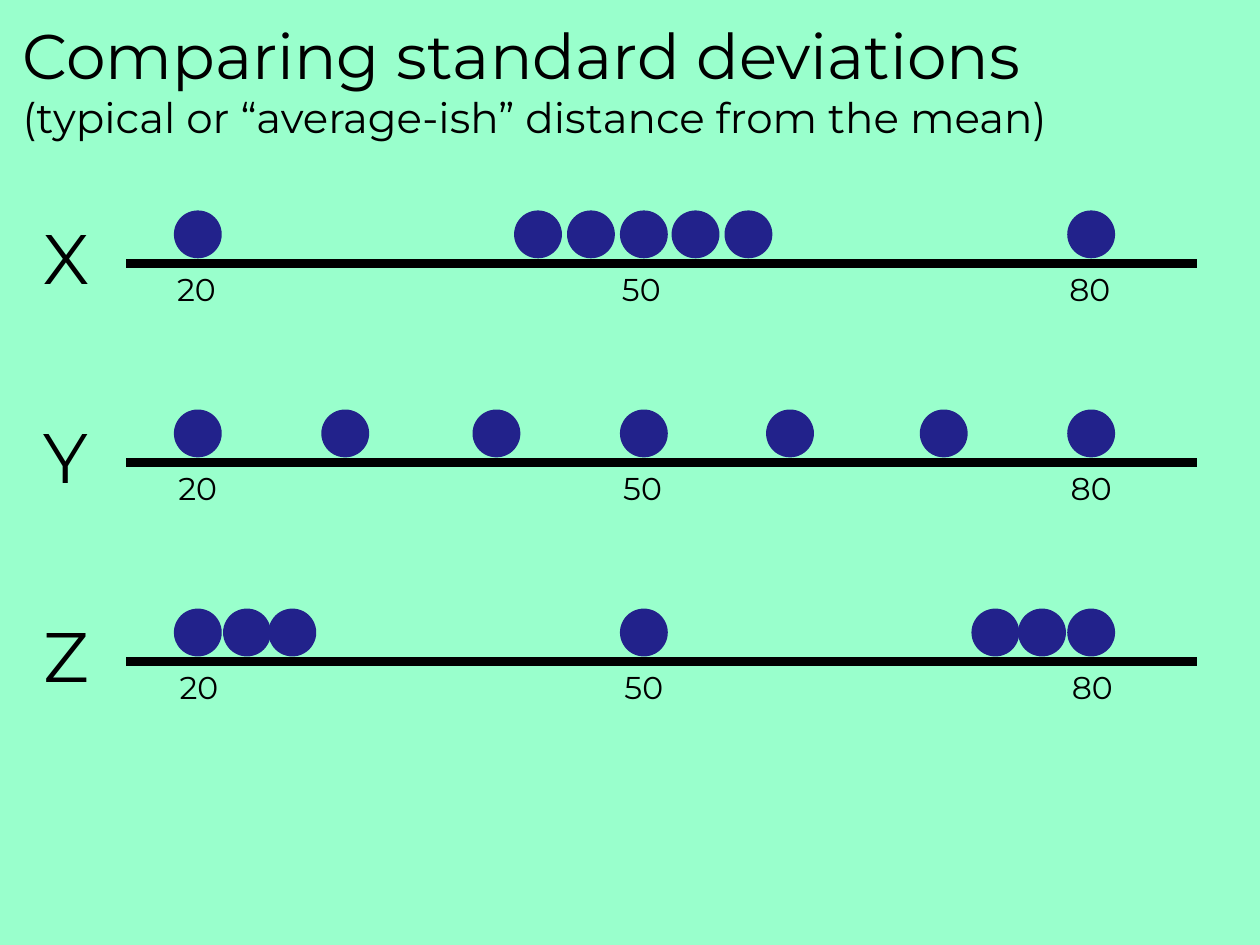
import pptx
import pptx.dml.color
import pptx.enum.shapes
import pptx.enum.text
import pptx.oxml.ns
import pptx.util
from lxml import etree
from pptx.util import Inches

FONT = "Montserrat"
BLACK = "000000"
NAVY = "22228B"
MINT = "99FFCC"

DOT_SIZE = 0.38
AXIS_START = 0.75  # from the left of a row
AXIS_DROP = 0.44   # from the top of a row
DOT_RISE = 0.42    # from the axis up to the top of a dot
ROW_PITCH = 1.58
LABEL_DRIFT = 0.01  # labels move right a little with each row

LABELS = [("20", 1.04), ("50", 4.57), ("80", 8.13)]  # text, left within a row
ROWS = [  # letter, left of each dot within a row
    ("X", [1.13, 3.83, 4.25, 4.67, 5.08, 5.5, 8.22]),
    ("Y", [1.13, 2.3, 3.5, 4.67, 5.83, 7.05, 8.22]),
    ("Z", [1.13, 1.52, 1.88, 4.67, 7.46, 7.83, 8.22]),
]


def color(hex_string):
    return pptx.dml.color.RGBColor.from_string(hex_string)


def style_font(font, size):
    font.name = FONT
    font.size = pptx.util.Pt(size)
    font.color.rgb = color(BLACK)


def add_label(shapes, text, left, top, width, height, size, align):
    box = shapes.add_textbox(Inches(left), Inches(top), Inches(width), Inches(height))
    frame = box.text_frame
    frame.word_wrap = False
    frame.auto_size = pptx.enum.text.MSO_AUTO_SIZE.SHAPE_TO_FIT_TEXT
    paragraph = frame.paragraphs[0]
    paragraph.text = text
    paragraph.alignment = align
    style_font(paragraph.font, size)


def add_axis(shapes, left, right, y):
    axis = shapes.add_connector(
        pptx.enum.shapes.MSO_CONNECTOR.STRAIGHT,
        Inches(left), Inches(y), Inches(right), Inches(y))
    axis.line.color.rgb = color(BLACK)
    axis.line.width = pptx.util.Pt(5)
    properties = axis._element.spPr
    etree.SubElement(properties, pptx.oxml.ns.qn("a:effectLst"))


def add_dot(shapes, left, top):
    dot = shapes.add_shape(
        pptx.enum.shapes.MSO_SHAPE.OVAL,
        Inches(left), Inches(top), Inches(DOT_SIZE), Inches(DOT_SIZE))
    dot.shadow.inherit = False
    dot.fill.solid()
    dot.fill.fore_color.rgb = color(NAVY)
    dot.line.fill.background()


def add_title(slide, left, top, width, height):
    title = slide.shapes.title
    title.left, title.top = Inches(left), Inches(top)
    title.width, title.height = Inches(width), Inches(height)
    frame = title.text_frame
    frame.word_wrap = True
    frame.auto_size = pptx.enum.text.MSO_AUTO_SIZE.NONE
    frame.vertical_anchor = pptx.enum.text.MSO_ANCHOR.TOP
    paragraph = frame.paragraphs[0]
    paragraph.alignment = pptx.enum.text.PP_ALIGN.LEFT
    style_font(paragraph.font, 36)
    heading = paragraph.add_run()
    heading.text = "Comparing standard deviations"
    paragraph.add_line_break()
    subtitle = paragraph.add_run()
    subtitle.text = "(typical or “average-ish” distance from the mean)"
    subtitle.font.size = pptx.util.Pt(24)


def add_dot_plot(slide, left, top, width, dots, label_shift):
    """Group one axis with its dots above and its scale labels below."""
    shapes = slide.shapes.add_group_shape().shapes
    axis_y = top + AXIS_DROP
    add_axis(shapes, left + AXIS_START, left + width, axis_y)
    for dot_left in dots:
        add_dot(shapes, left + dot_left, axis_y - DOT_RISE)
    for text, label_left in LABELS:
        add_label(shapes, text, left + label_left + label_shift, axis_y,
                  0.54, 0.4, 18, pptx.enum.text.PP_ALIGN.CENTER)


def main():
    presentation = pptx.Presentation()
    presentation.slide_width = Inches(10)
    presentation.slide_height = Inches(7.5)
    slide = presentation.slides.add_slide(presentation.slide_layouts[5])
    slide.background.fill.solid()
    slide.background.fill.fore_color.rgb = color(MINT)

    add_title(slide, 0.08, 0.08, 9.25, 0.67)
    for index, (letter, dots) in enumerate(ROWS):
        top = 1.65 + index * ROW_PITCH
        add_dot_plot(slide, 0.25, top, 9.25, dots, index * LABEL_DRIFT)
        add_label(slide.shapes, letter, 0.25, top, 0.61, 0.77, 40,
                  pptx.enum.text.PP_ALIGN.LEFT)

    presentation.save("out.pptx")


if __name__ == "__main__":
    main()
